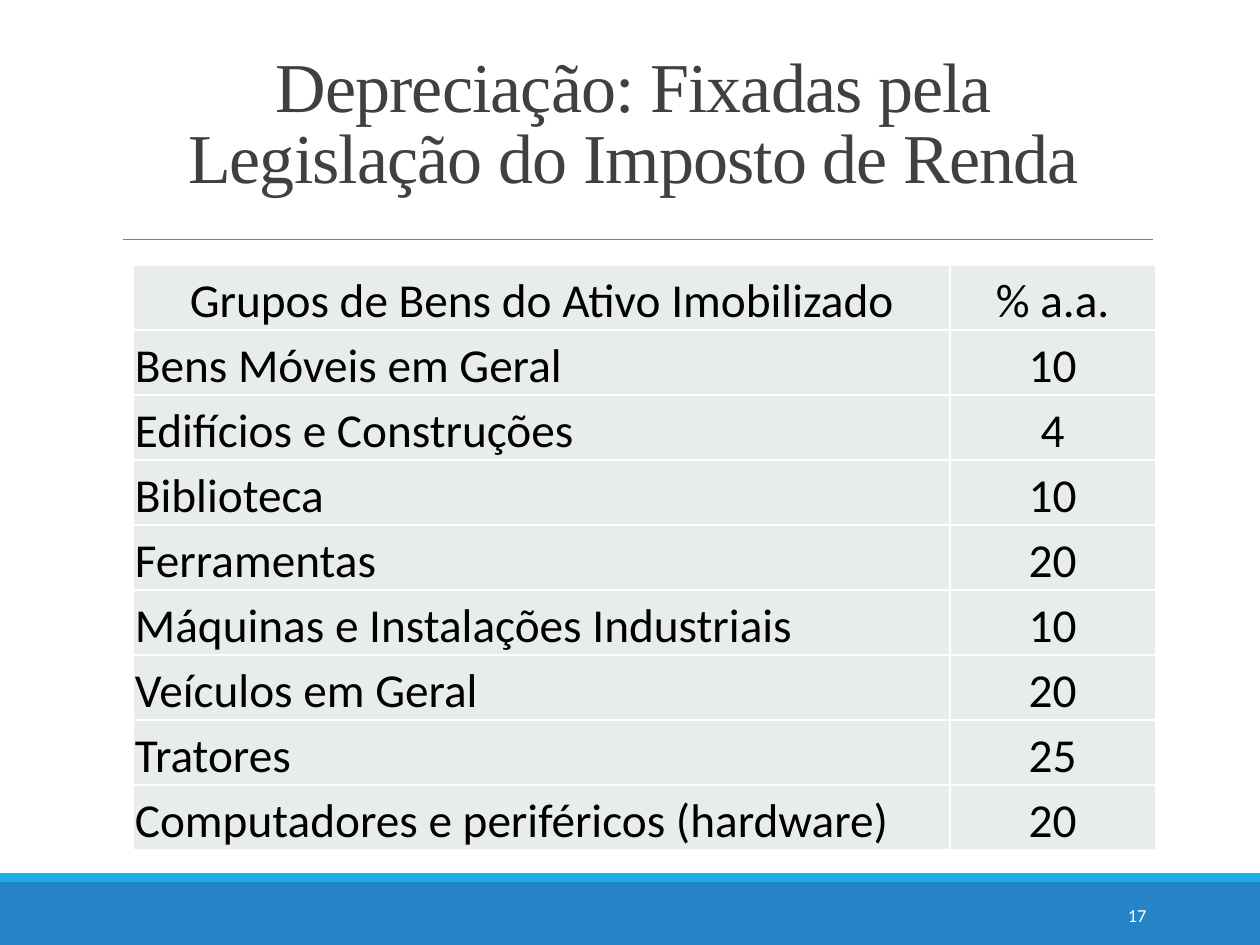
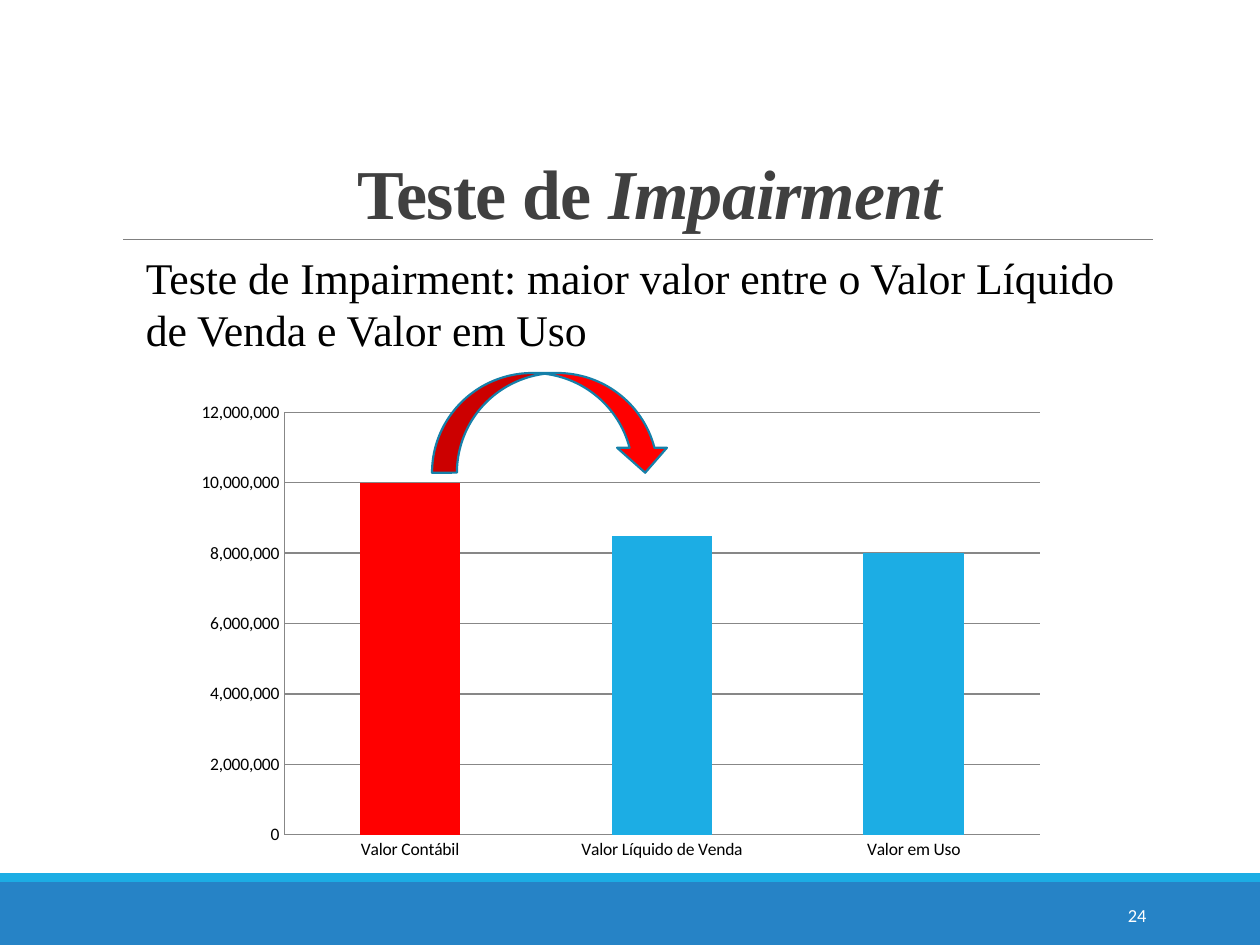
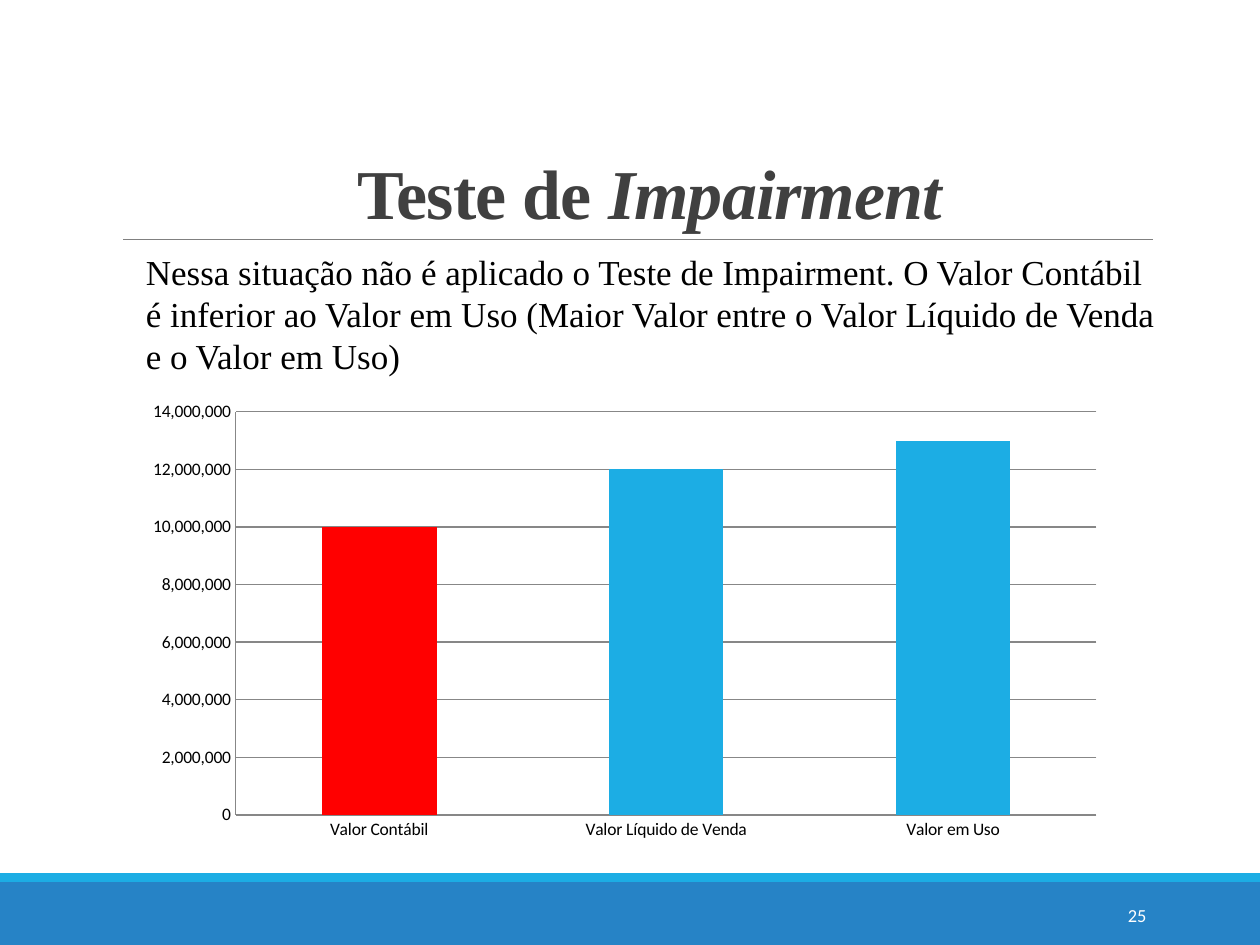
from lxml import etree
from pptx import Presentation
from pptx import util as u
from pptx.chart import data
from pptx.dml import color
from pptx.enum import chart as ch, shapes, text
from pptx.oxml import ns

HUES = {
    "blue": "2683C6", "sky": "1CADE4", "edge": "1580A9", "red": "FF0000",
    "rule": "808080", "grid": "878787", "title": "404040", "cell": "E8EDE9",
    "black": "000000", "white": "FFFFFF",
}
SERIF, SANS = "Times New Roman", "Calibri"
LEFT, MID, RIGHT = text.PP_ALIGN.LEFT, text.PP_ALIGN.CENTER, text.PP_ALIGN.RIGHT
LOW, HALF, TOP = text.MSO_ANCHOR.BOTTOM, text.MSO_ANCHOR.MIDDLE, text.MSO_ANCHOR.TOP

RATES = [
    ("Grupos de Bens do Ativo Imobilizado", "% a.a."),
    ("Bens Móveis em Geral", "10"),
    ("Edifícios e Construções", "4"),
    ("Biblioteca", "10"),
    ("Ferramentas", "20"),
    ("Máquinas e Instalações Industriais", "10"),
    ("Veículos em Geral", "20"),
    ("Tratores", "25"),
    ("Computadores e periféricos (hardware)", "20"),
]
COLS = (16.46, 4.14)
ROW = 1.31
GROUPS = ("Valor Contábil", "Valor Líquido de Venda", "Valor em Uso")
TESTS = [
    {"page": "24", "size": 25, "box": (2.69, 4.93, 20.6, 2.39),
     "note": "Teste de Impairment: maior valor entre o Valor Líquido de Venda e Valor em Uso",
     "vals": (10000000, 8500000, 8000000), "plot": (3.71, 7.92, 17.6, 9.6),
     "arrow": (8.71, 7.52, 4.8, 2.01)},
    {"page": "25", "size": 20, "box": (2.69, 4.93, 21, 2.82),
     "note": "Nessa situação não é aplicado o Teste de Impairment. O Valor Contábil "
             "é inferior ao Valor em Uso (Maior Valor entre o Valor Líquido de Venda "
             "e o Valor em Uso)",
     "vals": (10000000, 12000000, 13000000), "plot": (2.69, 7.92, 19.81, 9.19)},
]


def hue(name):
    return color.RGBColor.from_string(HUES[name])


def cm(*nums):
    return [u.Cm(n) for n in nums]


def write(frame, runs, size=20, font=SERIF, tone="black", bold=False,
          align=LEFT, anchor=TOP, lead=None, space=None):
    frame.word_wrap = True
    frame.vertical_anchor = anchor
    para = frame.paragraphs[0]
    para.alignment = align
    if lead:
        para.line_spacing = lead
    for words, slant in runs:
        run = para.add_run()
        run.text = words
        face = run.font
        face.size, face.name, face.bold, face.italic = u.Pt(size), font, bold, slant
        face.color.rgb = hue(tone)
        if space:
            run._r.get_or_add_rPr().set("spc", str(space))


def label(slide, box, runs, **form):
    write(slide.shapes.add_textbox(*cm(*box)).text_frame, runs, **form)


def block(slide, kind, box, fill, edge=None):
    shape = slide.shapes.add_shape(kind, *cm(*box))
    shape.shadow.inherit = False
    shape.fill.solid()
    shape.fill.fore_color.rgb = hue(fill)
    if edge:
        shape.line.color.rgb = hue(edge)
        shape.line.width = u.Pt(1.25)
    else:
        shape.line.fill.background()


def start(deck, page, box, runs, bold=False):
    slide = deck.slides.add_slide(deck.slide_layouts[6])
    rect = shapes.MSO_SHAPE.RECTANGLE
    block(slide, rect, (0, 17.78, 25.4, 1.27), "blue")
    block(slide, rect, (0, 17.6, 25.4, 0.18), "sky")
    rule = slide.shapes.add_connector(shapes.MSO_CONNECTOR.STRAIGHT, *cm(2.48, 4.82, 23.24, 4.82))
    rule.line.color.rgb = hue("rule")
    rule.line.width = u.Pt(0.5)
    etree.SubElement(rule._element.spPr, ns.qn("a:effectLst"))
    label(slide, box, runs, size=40, tone="title", bold=bold,
          align=MID, anchor=LOW, lead=0.85, space=-50)
    label(slide, (20.62, 17.93, 2.74, 1.02), [(page, False)], size=10.5,
          font=SANS, tone="white", align=RIGHT, anchor=HALF)
    return slide


def border(cell):
    props = cell._tc.get_or_add_tcPr()
    for spot, side in enumerate(("lnL", "lnR", "lnT", "lnB")):
        line = etree.Element(ns.qn("a:" + side), w=str(u.Pt(1)))
        fill = etree.SubElement(line, ns.qn("a:solidFill"))
        etree.SubElement(fill, ns.qn("a:srgbClr"), val=HUES["white"])
        props.insert(spot, line)


def rates(slide):
    size = (sum(COLS), ROW * len(RATES))
    table = slide.shapes.add_table(len(RATES), len(COLS), *cm(2.69, 5.34, *size)).table
    table.first_row = table.horz_banding = False
    for col, wide in zip(table.columns, COLS):
        col.width = u.Cm(wide)
    for r, row in enumerate(RATES):
        table.rows[r].height = u.Cm(ROW)
        for c, words in enumerate(row):
            cell = table.cell(r, c)
            cell.margin_left = cell.margin_right = cell.margin_top = u.Cm(0.03)
            cell.margin_bottom = 0
            cell.fill.solid()
            cell.fill.fore_color.rgb = hue("cell")
            border(cell)
            write(cell.text_frame, [(words, False)], size=27, font=SANS,
                  align=LEFT if r and not c else MID)
            cell.vertical_anchor = LOW


def bars(slide, box, vals):
    feed = data.CategoryChartData(number_format="#,##0")
    feed.categories = GROUPS
    feed.add_series("Series 1", vals)
    kind = ch.XL_CHART_TYPE.COLUMN_CLUSTERED
    chart = slide.shapes.add_chart(kind, *cm(*box), feed).chart
    chart.has_legend = chart.has_title = False
    chart.font.size, chart.font.name = u.Pt(10), SANS
    chart.font.color.rgb = hue("black")
    scale = chart.value_axis
    scale.has_major_gridlines = True
    scale.tick_labels.number_format = "#,##0"
    scale.tick_labels.number_format_is_linked = False
    for axis in (scale, chart.category_axis):
        axis.major_tick_mark = axis.minor_tick_mark = ch.XL_TICK_MARK.NONE
    for part in (scale, chart.category_axis, scale.major_gridlines):
        part.format.line.color.rgb = hue("grid")
        part.format.line.width = u.Pt(0.75)
    plot = chart.plots[0]
    plot.gap_width = 150
    plot.vary_by_categories = False
    set1 = plot.series[0]
    for form, tone in ((set1.format, "sky"), (set1.points[0].format, "red")):
        form.fill.solid()
        form.fill.fore_color.rgb = hue(tone)


def main():
    deck = Presentation()
    deck.slide_width, deck.slide_height = cm(25.4, 19.05)
    slide = start(deck, "17", (2.29, 0.79, 20.96, 3.33),
                  [("Depreciação: Fixadas pela Legislação do Imposto de Renda", False)])
    rates(slide)
    for test in TESTS:
        slide = start(deck, test["page"], (2.62, 0.79, 20.96, 4.04),
                      [("Teste de ", False), ("Impairment", True)], bold=True)
        bars(slide, test["plot"], test["vals"])
        if "arrow" in test:
            block(slide, shapes.MSO_SHAPE.CURVED_DOWN_ARROW, test["arrow"], "red", "edge")
        label(slide, test["box"], [(test["note"], False)], size=test["size"])
    deck.save("out.pptx")


if __name__ == "__main__":
    main()
